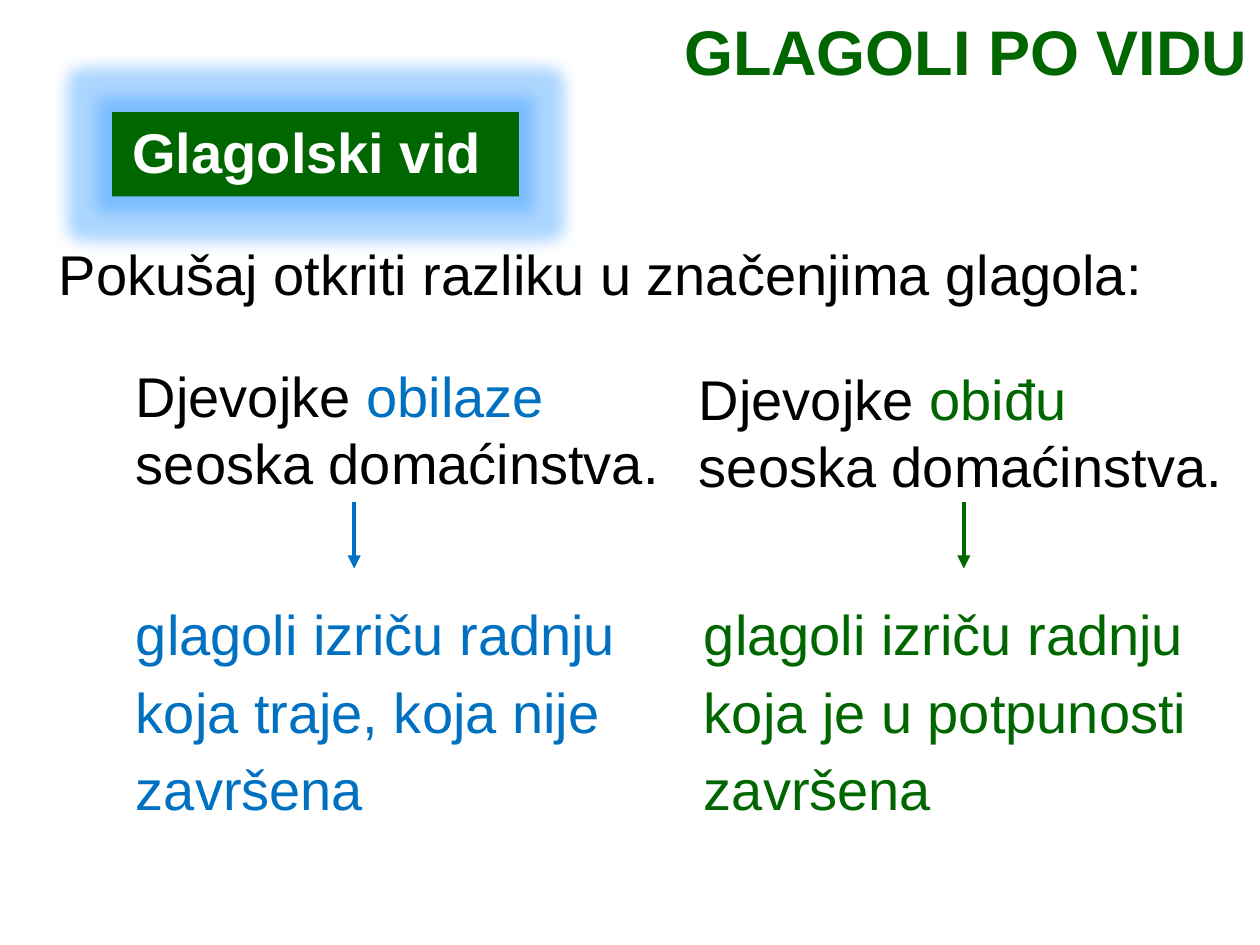
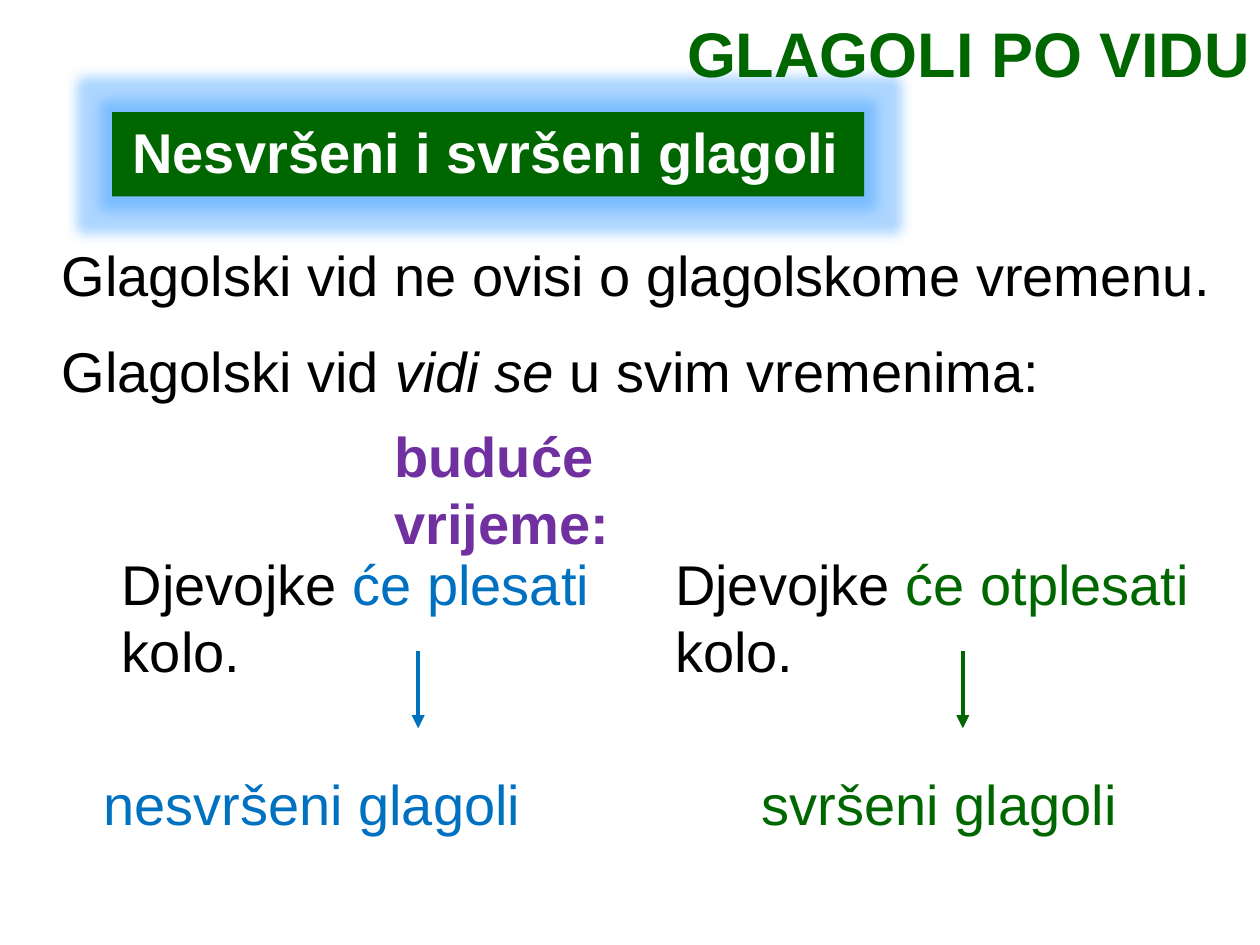
import dataclasses

import lxml.etree
import pptx
import pptx.dml.color
import pptx.enum.shapes
import pptx.enum.text
import pptx.oxml.ns
import pptx.util

Cm = pptx.util.Cm
Pt = pptx.util.Pt
Anchor = pptx.enum.text.MSO_ANCHOR
Align = pptx.enum.text.PP_ALIGN
qualified = pptx.oxml.ns.qn


@dataclasses.dataclass(frozen=True)
class Theme:
    font: str = "Arial"
    green: str = "006600"
    blue: str = "0070C0"
    purple: str = "7030A0"
    black: str = "000000"
    white: str = "FFFFFF"
    glow: str = "3399FF"
    title_size: int = 36
    body_size: int = 32
    arrow_width: float = 2.5


theme = Theme()


def add_text(slide, text, box, color=theme.black, size=theme.body_size, bold=False,
             highlight=None, highlight_color=None, italic=False, align=Align.LEFT,
             anchor=Anchor.TOP, wrap=True, grow=True, insets=(0.25, 0.13, 0.25, 0.13),
             line_spacing=None, before=0, after=0):
    shape = slide.shapes.add_textbox(*map(Cm, box))
    frame = shape.text_frame
    frame.word_wrap = wrap
    frame.vertical_anchor = anchor
    if grow:
        frame.auto_size = pptx.enum.text.MSO_AUTO_SIZE.SHAPE_TO_FIT_TEXT
    frame.margin_left, frame.margin_top, frame.margin_right, frame.margin_bottom = map(Cm, insets)
    paragraph = frame.paragraphs[0]
    paragraph.alignment = align
    paragraph.line_spacing = line_spacing
    paragraph.space_before = Pt(before)
    paragraph.space_after = Pt(after)
    for piece in text.partition(highlight) if highlight else [text]:
        if not piece:
            continue
        marked = piece == highlight
        run = paragraph.add_run()
        run.text = piece
        run.font.name = theme.font
        run.font.size = Pt(size)
        run.font.bold = bold
        run.font.italic = italic and marked
        piece_color = highlight_color if marked and highlight_color else color
        run.font.color.rgb = pptx.dml.color.RGBColor.from_string(piece_color)


def add_arrow(slide, x, top, bottom, color):
    connector = slide.shapes.add_connector(
        pptx.enum.shapes.MSO_CONNECTOR.STRAIGHT, Cm(x), Cm(top), Cm(x), Cm(bottom))
    connector.line.color.rgb = pptx.dml.color.RGBColor.from_string(color)
    connector.line.width = Pt(theme.arrow_width)
    outline = connector.line._get_or_add_ln()
    lxml.etree.SubElement(outline, qualified("a:tailEnd"), type="triangle")
    lxml.etree.SubElement(connector._element.spPr, qualified("a:effectLst"))


presentation = pptx.Presentation()
presentation.slide_width = Cm(25.4)
presentation.slide_height = Cm(19.05)

slides = []
for heading, band_width, glow_radius, title_left, title_top in [
    ("Glagolski vid", 8.2, 0.62, 5.66, 0),
    ("Nesvršeni i svršeni glagoli", 15.16, 0.5, 5.72, 0.03),
]:
    slide = presentation.slides.add_slide(presentation.slide_layouts[6])
    band = slide.shapes.add_shape(pptx.enum.shapes.MSO_SHAPE.RECTANGLE,
                                  Cm(2.26), Cm(2.26), Cm(band_width), Cm(1.7))
    band.shadow.inherit = False
    band.fill.solid()
    band.fill.fore_color.rgb = pptx.dml.color.RGBColor.from_string(theme.green)
    band.line.fill.background()
    effects = band._element.spPr.find(qualified("a:effectLst"))
    glow = lxml.etree.SubElement(effects, qualified("a:glow"), rad=str(Cm(glow_radius)))
    glow_color = lxml.etree.SubElement(glow, qualified("a:srgbClr"), val=theme.glow)
    lxml.etree.SubElement(glow_color, qualified("a:alpha"), val="40000")
    add_text(slide, heading, (2.49, 1.7, 19.02, 2.13), color=theme.white, bold=True,
             anchor=Anchor.BOTTOM, grow=False, insets=(0.18, 0.1, 0.18, 0.1), before=10)
    add_text(slide, "GLAGOLI PO VIDU", (title_left, title_top, 19.74, 1.93),
             color=theme.green, size=theme.title_size, bold=True, align=Align.RIGHT,
             anchor=Anchor.BOTTOM, grow=False, line_spacing=0.9)
    slides.append(slide)

meaning_slide, tense_slide = slides

add_text(meaning_slide, "Pokušaj otkriti razliku u značenjima glagola:", (0.94, 4.7, 23.11, 1.63))
for verb, color, example_box, meaning, meaning_box, arrow_x in [
    ("obilaze", theme.blue, (2.49, 7.16, 11.15, 3),
     "glagoli izriču radnju koja traje, koja nije završena", (2.49, 11.76, 10.62, 4.98), 7.14),
    ("obiđu", theme.green, (13.84, 7.21, 11.56, 3),
     "glagoli izriču radnju koja je u potpunosti završena", (13.94, 11.76, 11.35, 4.98), 19.43),
]:
    add_text(meaning_slide, f"Djevojke {verb} seoska domaćinstva.", example_box,
             highlight=verb, highlight_color=color)
    add_text(meaning_slide, meaning, meaning_box, color=color, line_spacing=1.15, after=10)
    add_arrow(meaning_slide, arrow_x, 10.11, 11.46, color)

add_text(tense_slide, "Glagolski vid ne ovisi o glagolskome vremenu.",
         (0.99, 4.72, 24.71, 1.63), anchor=Anchor.MIDDLE)
add_text(tense_slide, "Glagolski vid vidi se u svim vremenima:", (0.99, 6.65, 20.37, 1.63),
         highlight="vidi se ", italic=True, wrap=False)
for verb, color, example_box, kind, kind_box, arrow_x in [
    ("će plesati ", theme.blue, (2.21, 10.95, 11.25, 3),
     "nesvršeni glagoli", (1.83, 15.39, 8.99, 1.63), 8.43),
    ("će otplesati ", theme.green, (13.36, 10.95, 12.12, 3),
     "svršeni glagoli", (15.11, 15.39, 7.72, 1.63), 19.41),
]:
    add_text(tense_slide, f"Djevojke {verb}kolo.", example_box,
             highlight=verb, highlight_color=color)
    add_text(tense_slide, kind, kind_box, color=color, wrap=False)
    add_arrow(tense_slide, arrow_x, 13.13, 14.68, color)
add_text(tense_slide, "buduće vrijeme:", (7.7, 8.36, 9.17, 1.63), color=theme.purple,
         bold=True, grow=False, insets=(0.25, 0.13, 3, 0.13))

presentation.save("out.pptx")
